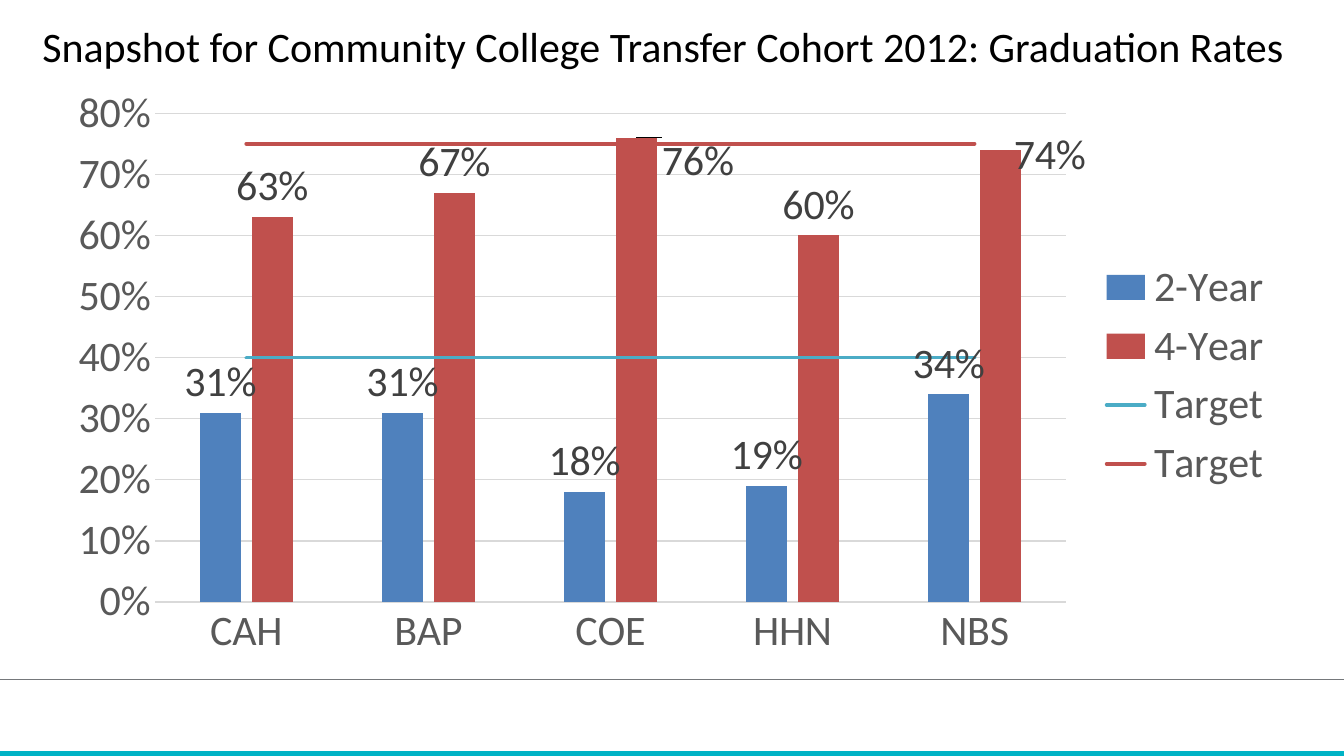
from pptx import Presentation
from pptx.chart.data import CategoryChartData
from pptx.dml.color import RGBColor
from pptx.enum.chart import (XL_CHART_TYPE, XL_LABEL_POSITION, XL_LEGEND_POSITION,
                             XL_MARKER_STYLE, XL_TICK_MARK)
from pptx.enum.shapes import MSO_CONNECTOR, MSO_SHAPE
from pptx.enum.text import MSO_ANCHOR, PP_ALIGN
from pptx.oxml import parse_xml
from pptx.oxml.ns import nsdecls
from pptx.util import Inches, Pt

TITLE = "Snapshot for Community College Transfer Cohort 2012: Graduation Rates"
CATS = ["CAH", "BAP", "COE", "HHN", "NBS"]
RATES = [
    ("2-Year", [0.31, 0.31, 0.18, 0.19, 0.34], "4F81BD"),
    ("4-Year", [0.63, 0.67, 0.76, 0.6, 0.74], "C0504D"),
]
GOALS = [("Target", 0.4, "4BACC6"), ("Target", 0.75, "C0504D")]
SHIFTS = {2: (0.05, 0.09), 4: (0.04, 0.06)}
TOP = 0.8
THEME = {"font": "Calibri", "size": 25, "title": "000000", "axis": "595959",
         "label": "404040", "grid": "D9D9D9", "rule": "75787B", "band": "00B3C5"}


def style(font, color):
    """Apply the shared face and size with a theme color."""
    font.name, font.size = THEME["font"], Pt(THEME["size"])
    font.bold = False
    font.color.rgb = RGBColor.from_string(THEME[color])


def paint(fill, color):
    """Fill with one solid color."""
    fill.solid()
    fill.fore_color.rgb = RGBColor.from_string(color)


def stroke(line, color, width):
    """Set the color and width of a line."""
    line.color.rgb = RGBColor.from_string(color)
    line.width = Pt(width)


def place(x, y, extra=""):
    """Return a manual chart layout."""
    return parse_xml(f'<c:layout {nsdecls("c")}><c:manualLayout>{extra}'
                     f'<c:x val="{x}"/><c:y val="{y}"/></c:manualLayout></c:layout>')


def add_lines(area):
    """Move the goal series to a line plot on hidden second axes."""
    bars = area.xpath("c:barChart")[0]
    plot = parse_xml(f'<c:lineChart {nsdecls("c")}><c:grouping val="standard"/>'
                     '<c:varyColors val="0"/><c:marker val="1"/>'
                     '<c:axId val="501"/><c:axId val="502"/></c:lineChart>')
    mark = plot.xpath("c:marker")[0]
    for ser in bars.xpath("c:ser")[len(RATES):]:
        for node in ser.xpath("c:invertIfNegative"):
            ser.remove(node)
        mark.addprevious(ser)
    bars.addnext(plot)
    last = area.xpath("c:valAx")[-1]
    for kind, own, other, side, span, cross in (
            ("valAx", 502, 501, "r", f'<c:max val="{TOP}"/><c:min val="0"/>', "max"),
            ("catAx", 501, 502, "b", "", "autoZero")):
        last.addnext(parse_xml(
            f'<c:{kind} {nsdecls("c")}><c:axId val="{own}"/><c:scaling>'
            f'<c:orientation val="minMax"/>{span}</c:scaling><c:delete val="1"/>'
            f'<c:axPos val="{side}"/><c:crossAx val="{other}"/>'
            f'<c:crosses val="{cross}"/></c:{kind}>'))


def add_rates(slide):
    """Draw the graduation rates with their target lines."""
    data = CategoryChartData(number_format="0%")
    data.categories = CATS
    for name, vals, _ in RATES:
        data.add_series(name, vals)
    for name, goal, _ in GOALS:
        data.add_series(name, [goal] * len(CATS))
    chart = slide.shapes.add_chart(
        XL_CHART_TYPE.COLUMN_CLUSTERED, Inches(0.47), Inches(0.64),
        Inches(10.17), Inches(4.93), data).chart
    style(chart.font, "axis")
    chart.has_title = False
    chart.has_legend = True
    chart.legend.position = XL_LEGEND_POSITION.RIGHT
    chart.legend.include_in_layout = False
    style(chart.legend.font, "axis")

    for axis in (chart.category_axis, chart.value_axis):
        axis.major_tick_mark = axis.minor_tick_mark = XL_TICK_MARK.NONE
        style(axis.tick_labels.font, "axis")
    stroke(chart.category_axis.format.line, THEME["grid"], 0.75)
    scale = chart.value_axis
    scale.minimum_scale, scale.maximum_scale, scale.major_unit = 0, TOP, 0.1
    scale.format.line.fill.background()
    stroke(scale.major_gridlines.format.line, THEME["grid"], 0.75)
    scale.tick_labels.number_format = "0%"
    scale.tick_labels.number_format_is_linked = False

    area = chart.plots[0].series[0].format and chart.element.xpath(".//c:plotArea")[0]
    add_lines(area)
    for node in area.xpath("c:layout"):
        area.remove(node)
    size = '<c:w val="0.74"/><c:h val="0.82"/>'
    frame = place(0.08, 0.06, '<c:layoutTarget val="inner"/>'
                  '<c:xMode val="edge"/><c:yMode val="edge"/>')
    for node in parse_xml(f'<c:layout {nsdecls("c")}>{size}</c:layout>'):
        frame[0].append(node)
    area.insert(0, frame)

    bars, lines = chart.plots
    bars.gap_width, bars.overlap, bars.vary_by_categories = 219, -27, False
    for ser, (_, _, color) in zip(bars.series, RATES):
        paint(ser.format.fill, color)
        tags = ser.data_labels
        tags.show_value, tags.number_format = True, "0%"
        tags.number_format_is_linked = False
        tags.position = XL_LABEL_POSITION.OUTSIDE_END
        style(tags.font, "label")
    four = bars.series[1]
    for spot, shift in SHIFTS.items():
        tag = four.points[spot].data_label
        style(tag.font, "label")
        tag.position = XL_LABEL_POSITION.OUTSIDE_END
        mark = area.xpath(f'.//c:dLbl/c:idx[@val="{spot}"]')[0]
        mark.addnext(place(*shift))
    for ser, (_, _, color) in zip(lines.series, GOALS):
        stroke(ser.format.line, color, 2.25)
        ser.marker.style = XL_MARKER_STYLE.NONE
        ser.smooth = False
    for line in area.xpath("c:lineChart/c:ser/c:spPr/a:ln"):
        line.set("cap", "rnd")


def main():
    """Build the slide."""
    deck = Presentation()
    deck.slide_width, deck.slide_height = Inches(11.11), Inches(6.25)
    slide = deck.slides.add_slide(deck.slide_layouts[5])
    rule = slide.shapes.add_connector(MSO_CONNECTOR.STRAIGHT, 0, Inches(5.62),
                                      deck.slide_width, Inches(5.62))
    stroke(rule.line, THEME["rule"], 0.5)
    rule.element.spPr.append(parse_xml(f'<a:effectLst {nsdecls("a")}/>'))
    band = slide.shapes.add_shape(MSO_SHAPE.RECTANGLE, 0, Inches(6.21),
                                  deck.slide_width, Inches(0.08))
    paint(band.fill, THEME["band"])
    band.line.fill.background()
    band.shadow.inherit = False
    add_rates(slide)

    title = slide.shapes.title
    title.left, title.top = Inches(0.25), Inches(0.12)
    title.width, title.height = Inches(10.75), Inches(0.52)
    frame = title.text_frame
    frame.text = TITLE
    frame.word_wrap = True
    frame.vertical_anchor = MSO_ANCHOR.TOP
    head = frame.paragraphs[0]
    head.alignment = PP_ALIGN.LEFT
    style(head.runs[0].font, "title")
    deck.save("out.pptx")


if __name__ == "__main__":
    main()
